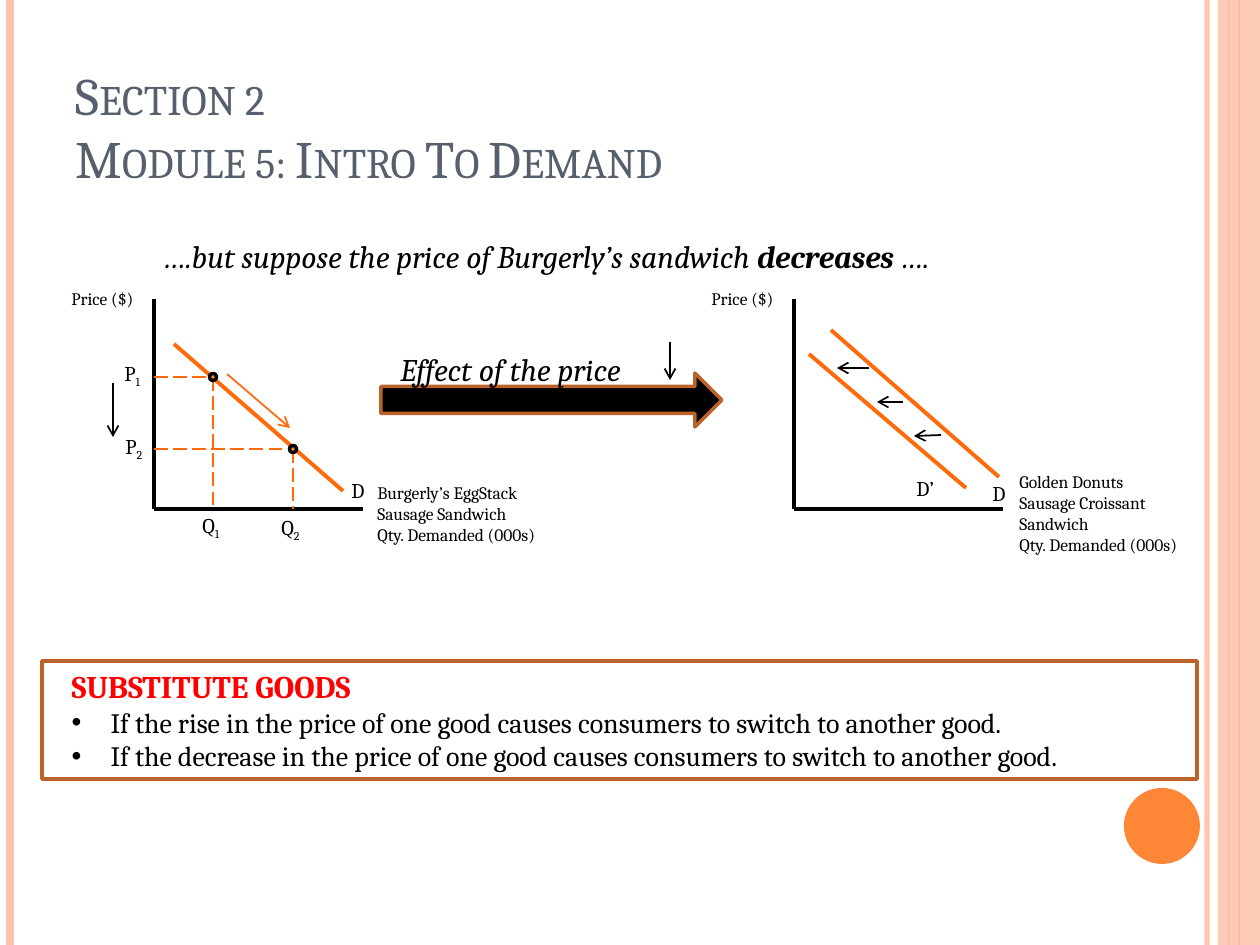
from lxml import etree
from pptx import Presentation
from pptx.dml.color import RGBColor
from pptx.enum.dml import MSO_LINE
from pptx.enum.shapes import MSO_CONNECTOR, MSO_SHAPE
from pptx.enum.text import MSO_ANCHOR, MSO_AUTO_SIZE, PP_ALIGN
from pptx.oxml.ns import qn
from pptx.util import Emu, Pt

STRAIGHT = MSO_CONNECTOR.STRAIGHT
LONG_DASH = MSO_LINE.LONG_DASH
RECTANGLE, ELLIPSE = MSO_SHAPE.RECTANGLE, MSO_SHAPE.OVAL
RIGHT_ARROW = MSO_SHAPE.RIGHT_ARROW
TOP, BOTTOM = MSO_ANCHOR.TOP, MSO_ANCHOR.BOTTOM
LEFT, NO_FIT = PP_ALIGN.LEFT, MSO_AUTO_SIZE.NONE

PX = 914400 / 126
WIDTH, HEIGHT = 1260, 945

THEME = {
    "font": "Cambria",
    "black": "000000", "title": "575F6D", "red": "FF0000",
    "curve": "FF6B0A", "border": "BC6329",
    "orange": "FE8637", "peach": "FEC3AE",
    "title_size": 30, "lead_size": 18, "list_size": 16,
    "label_size": 12, "caption_size": 10,
}

TITLE = ["Section 2", "Module 5: Intro To Demand"]
LEAD = [("….but suppose the price of Burgerly’s sandwich ", False),
        ("decreases", True), (" ….", False)]
EFFECT = "Effect of the price"
HEADING = "SUBSTITUTE GOODS"
RULES = [
    "If the rise in the price of one good causes consumers to switch to another good.",
    "If the decrease in the price of one good causes consumers to switch to another good.",
]

AXIS_WIDTH, AXIS_HEIGHT, BASELINE = 209, 210, 509
GRAPHS = [
    {"left": 154, "caption_at": (365, 476),
     "caption": ["Burgerly’s EggStack", "Sausage Sandwich", "Qty. Demanded (000s)"],
     "curves": [(174, 344, 343, 491)]},
    {"left": 794, "caption_at": (1007, 465),
     "caption": ["Golden Donuts", "Sausage Croissant", "Sandwich", "Qty. Demanded (000s)"],
     "curves": [(831, 330, 999, 477), (809, 354, 966, 488)]},
]
POINTS = [(213, 377), (293, 449)]
DOT = 7
LABELS = [
    ("D", "", 339, 471), ("D", "", 980, 474), ("D’", "", 904, 469),
    ("Q", "1", 190, 506), ("Q", "2", 269, 508),
    ("P", "1", 112, 354), ("P", "2", 113, 427),
]
ARROWS = [
    (869, 368, 837, 368, "black"), (903, 402, 877, 402, "black"),
    (941, 435, 914, 436, "black"), (113, 383, 113, 437, "black"),
    (227, 374, 290, 428, "curve"), (670, 342, 670, 380, "black"),
]
EDGE_LINES = [(1207, "peach", 3, 93), (10, "peach", 4.5, 100),
              (1239, "orange", 1.5, 100), (1229, "orange", 0.75, 100)]


def px(value):
    return Emu(round(value * PX))


def color(name):
    return RGBColor.from_string(THEME[name])


def set_alpha(element, percent):
    if percent < 100:
        rgb = next(element.iter(qn("a:srgbClr")))
        etree.SubElement(rgb, qn("a:alpha"), val=str(percent * 1000))


def add_line(page, ends, name, width, dash=None, arrow=False, alpha=100):
    line = page.shapes.add_connector(STRAIGHT, *map(px, ends))
    line.line.color.rgb = color(name)
    line.line.width = Pt(width)
    if dash:
        line.line.dash_style = dash
    properties = line.element.spPr
    if arrow:
        etree.SubElement(properties.find(qn("a:ln")), qn("a:tailEnd"), type="arrow")
    set_alpha(properties, alpha)
    etree.SubElement(properties, qn("a:effectLst"))


def add_figure(page, kind, area, fill=None, border=None, alpha=100):
    shape = page.shapes.add_shape(kind, *map(px, area))
    shape.shadow.inherit = False
    if fill:
        shape.fill.solid()
        shape.fill.fore_color.rgb = color(fill)
        set_alpha(shape.element.spPr, alpha)
    else:
        shape.fill.background()
    if border:
        shape.line.color.rgb = color(border)
        shape.line.width = Pt(2)
    else:
        shape.line.fill.background()


def add_span(para, text, size, name="black", **formats):
    span = para.add_run()
    span.text = text
    span.font.color.rgb = color(name)
    values = {"name": THEME["font"], "size": Pt(THEME[size]), **formats}
    for key, value in values.items():
        setattr(span.font, key, value)
    return span


def set_frame(box, area, count, anchor=TOP):
    box.left, box.top, box.width, box.height = map(px, area)
    frame = box.text_frame
    values = {"word_wrap": True, "auto_size": NO_FIT, "vertical_anchor": anchor}
    for key, value in values.items():
        setattr(frame, key, value)
    for _ in range(count - 1):
        frame.add_paragraph()
    for para in frame.paragraphs:
        para.alignment = LEFT
        para.space_before = Pt(0)
    return frame.paragraphs


def add_box(page, area, count=1):
    return set_frame(page.shapes.add_textbox(0, 0, 0, 0), area, count)


def add_decoration(page):
    for x, name, width, alpha in EDGE_LINES:
        add_line(page, (x, 0, x, HEIGHT), name, width, alpha=alpha)
    add_figure(page, RECTANGLE, (1218, 0, 42, HEIGHT), "peach", alpha=87)
    add_figure(page, ELLIPSE, (1124, 788, 76, 76), "orange")


def add_title(page):
    paras = set_frame(page.shapes.title, (63, 38, 1029, 157), len(TITLE), BOTTOM)
    for para, text in zip(paras, TITLE):
        span = add_span(para, text, "title_size", "title")
        span.font.element.set("cap", "small") if hasattr(span.font, "element") else \
            para.runs[0]._r.get_or_add_rPr().set("cap", "small")


def add_graph(page, graph):
    left, top = graph["left"], BASELINE - AXIS_HEIGHT
    add_line(page, (left, top, left, BASELINE), "black", 2.25)
    add_line(page, (left, BASELINE, left + AXIS_WIDTH, BASELINE), "black", 2.25)
    for ends in graph["curves"]:
        add_line(page, ends, "curve", 2.25)
    add_span(add_box(page, (left - 95, 282, 110, 34))[0], "Price ($)", "caption_size")
    lines = graph["caption"]
    paras = add_box(page, (*graph["caption_at"], 230, 21 * len(lines) + 34), len(lines))
    for para, text in zip(paras, lines):
        add_span(para, text, "caption_size")


def add_points(page):
    axis = GRAPHS[0]["left"]
    for x, y in POINTS:
        add_line(page, (axis, y, x, y), "curve", 1, LONG_DASH)
        add_line(page, (x, y, x, BASELINE), "curve", 1, LONG_DASH)
        add_figure(page, ELLIPSE, (x - DOT / 2, y - DOT / 2, DOT, DOT), "orange", "black")


def add_labels(page):
    for letter, index, x, y in LABELS:
        para = add_box(page, (x, y, 60, 38))[0]
        add_span(para, letter, "label_size")
        if index:
            span = add_span(para, index, "label_size")
            span._r.get_or_add_rPr().set("baseline", "-25000")


def add_rules(page):
    paras = set_frame(page.placeholders[1], (59, 661, 1153, 118), len(RULES) + 1)
    add_span(paras[0], HEADING, "lead_size", "red", bold=True)
    for para, text in zip(paras[1:], RULES):
        add_span(para, text, "list_size")
    for number, para in enumerate(paras):
        indent = px(39) if number else 0
        properties = para._p.get_or_add_pPr()
        properties.set("marL", str(indent))
        properties.set("indent", str(-indent))
        if number:
            etree.SubElement(properties, qn("a:buChar"), char="•")
        else:
            etree.SubElement(properties, qn("a:buNone"))
    add_figure(page, RECTANGLE, (42, 661, 1155, 118), border="border")


def main():
    deck = Presentation()
    deck.slide_width, deck.slide_height = px(WIDTH), px(HEIGHT)
    page = deck.slides.add_slide(deck.slide_layouts[1])
    add_decoration(page)
    add_title(page)
    lead = add_box(page, (151, 231, 953, 50))[0]
    for text, bold in LEAD:
        add_span(lead, text, "lead_size", italic=True, bold=bold)
    for graph in GRAPHS:
        add_graph(page, graph)
    add_points(page)
    add_labels(page)
    add_figure(page, RIGHT_ARROW, (381, 373, 341, 54), "black", "border")
    add_span(add_box(page, (388, 344, 294, 50))[0], EFFECT, "lead_size", italic=True)
    for *ends, name in ARROWS:
        add_line(page, ends, name, 1, arrow=True)
    add_rules(page)
    deck.save("out.pptx")


if __name__ == "__main__":
    main()
